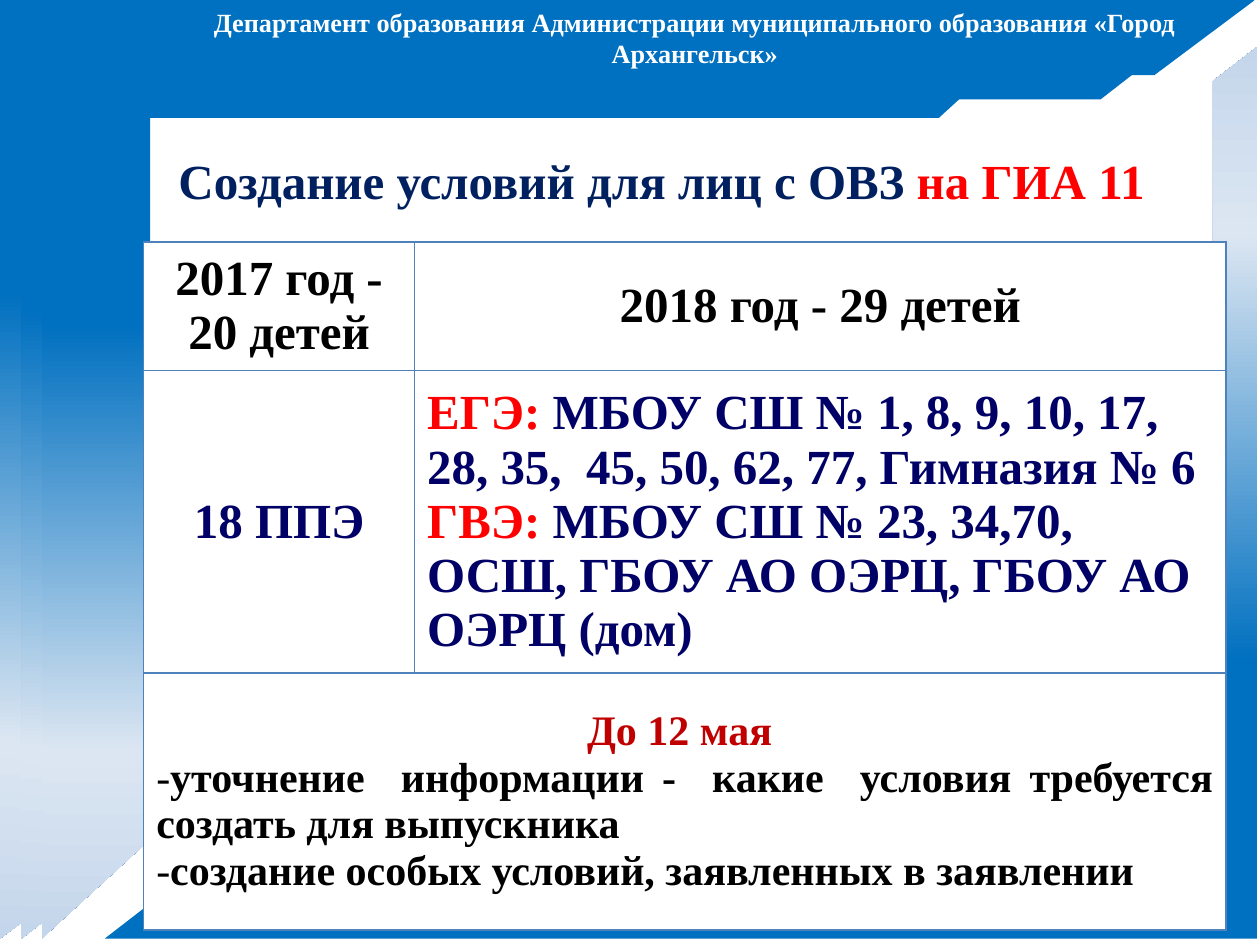
from lxml import etree
from pptx import Presentation
from pptx.dml.color import RGBColor
from pptx.enum.shapes import MSO_SHAPE
from pptx.enum.text import MSO_ANCHOR, PP_ALIGN
from pptx.oxml.ns import qn
from pptx.util import Inches, Pt

HALF_FRAME = MSO_SHAPE.HALF_FRAME
MIDDLE = MSO_ANCHOR.MIDDLE
LEFT, CENTER, JUSTIFY = PP_ALIGN.LEFT, PP_ALIGN.CENTER, PP_ALIGN.JUSTIFY

WHITE = RGBColor(0xFF, 0xFF, 0xFF)
BLACK = RGBColor(0x00, 0x00, 0x00)
NAVY = RGBColor(0x00, 0x20, 0x60)
INDIGO = RGBColor(0x00, 0x00, 0x66)
RED = RGBColor(0xFF, 0x00, 0x00)
DARK_RED = RGBColor(0xC0, 0x00, 0x00)
BORDER = RGBColor(0x4F, 0x81, 0xBD)
FRAME_STOPS = [
    (31, RGBColor(0x00, 0x70, 0xC0)),
    (79, RGBColor(0xDC, 0xE6, 0xF2)),
    (100, RGBColor(0xC4, 0xD6, 0xEB)),
    (100, RGBColor(0xFF, 0xEB, 0xFA)),
]
SERIF = "Times New Roman"

FRAMES = [
    ((0, 0, 9.96, 7.45), (0.08, 0.16), 0),
    ((0.17, 0.21, 9.31, 7.24), (0.08, 0.11), 0),
    ((0.33, 0.37, 7.74, 7.08), (0.08, 0.12), 0),
    ((0.83, 0.37, 9.15, 7.08), (0.05, 0.05), 180),
]
DEPARTMENT = [("Департамент образования Администрации муниципального образования «Город Архангельск»", WHITE)]
TITLE = [("Создание условий для лиц с ОВЗ ", NAVY), ("на ГИА 11", RED)]

COLUMN_WIDTHS = [2.15, 6.44]
ROWS = [
    (1.02, 28, [
        [(CENTER, "", [("2017 год -", BLACK)]), (CENTER, "", [("20 детей", BLACK)])],
        [(CENTER, "", [("2018 год - 29 детей", BLACK)])],
    ]),
    (2.4, 28, [
        [(CENTER, "", [("18 ППЭ", INDIGO)])],
        [
            (LEFT, "", [("ЕГЭ:", RED),
                        (" МБОУ СШ № 1, 8, 9, 10, 17, 28, 35,  45, 50, 62, 77, Гимназия № 6", INDIGO)]),
            (LEFT, "", [("ГВЭ:", RED),
                        (" МБОУ СШ № 23, 34,70, ОСШ, ГБОУ АО ОЭРЦ, ГБОУ АО ОЭРЦ (дом)", INDIGO)]),
        ],
    ]),
    (2.04, 24, [
        [
            (CENTER, "", [("До 12 мая ", DARK_RED)]),
            (JUSTIFY, "-", [("уточнение  информации -  какие  условия требуется создать для выпускника", BLACK)]),
            (JUSTIFY, "-", [("создание особых условий, заявленных в заявлении", BLACK)]),
        ],
    ]),
]


def add_runs(paragraph, runs, size, align):
    paragraph.alignment = align
    for text, color in runs:
        run = paragraph.add_run()
        run.text = text
        run.font.name = SERIF
        run.font.size = Pt(size)
        run.font.bold = True
        run.font.color.rgb = color


def fill_gradient(shape):
    shape.fill.gradient()
    shape.fill.gradient_angle = 270
    stops = shape._element.spPr.find(qn("a:gradFill")).find(qn("a:gsLst"))
    for stop in list(stops):
        stops.remove(stop)
    for percent, color in FRAME_STOPS:
        stop = etree.SubElement(stops, qn("a:gs"), pos=str(percent * 1000))
        etree.SubElement(stop, qn("a:srgbClr"), val=str(color))


def add_frame(slide, box, thickness, rotation):
    frame = slide.shapes.add_shape(HALF_FRAME, *map(Inches, box))
    frame.shadow.inherit = False
    frame.line.fill.background()
    frame.rotation = rotation
    for index, value in enumerate(thickness):
        frame.adjustments[index] = value
    fill_gradient(frame)


def style_cell(cell):
    cell.vertical_anchor = MIDDLE
    properties = cell._tc.get_or_add_tcPr()
    for side in ("a:lnL", "a:lnR", "a:lnT", "a:lnB"):
        line = etree.SubElement(properties, qn(side), w=str(Pt(1)))
        solid = etree.SubElement(line, qn("a:solidFill"))
        etree.SubElement(solid, qn("a:srgbClr"), val=str(BORDER))
    cell.fill.solid()
    cell.fill.fore_color.rgb = WHITE


def write_cell(cell, paragraphs, size):
    frame = cell.text_frame
    for index, (align, bullet, runs) in enumerate(paragraphs):
        paragraph = frame.add_paragraph() if index else frame.paragraphs[0]
        if bullet:
            properties = paragraph._p.get_or_add_pPr()
            etree.SubElement(properties, qn("a:buFont"), typeface=SERIF)
            etree.SubElement(properties, qn("a:buChar"), char=bullet)
        add_runs(paragraph, runs, size, align)


def add_conditions(slide):
    heights = [height for height, _, _ in ROWS]
    table = slide.shapes.add_table(
        len(ROWS), len(COLUMN_WIDTHS), Inches(1.14), Inches(1.92),
        Inches(sum(COLUMN_WIDTHS)), Inches(sum(heights))).table
    for column, width in zip(table.columns, COLUMN_WIDTHS):
        column.width = Inches(width)
    for row_index, (height, size, contents) in enumerate(ROWS):
        row = table.rows[row_index]
        row.height = Inches(height)
        for cell in row.cells:
            style_cell(cell)
        if len(contents) == 1:
            row.cells[0].merge(row.cells[len(COLUMN_WIDTHS) - 1])
        for column_index, paragraphs in enumerate(contents):
            write_cell(row.cells[column_index], paragraphs, size)


def main():
    deck = Presentation()
    deck.slide_width, deck.slide_height = Inches(10), Inches(7.5)
    slide = deck.slides.add_slide(deck.slide_layouts[5])
    title = slide.shapes.title

    for box, thickness, rotation in FRAMES:
        add_frame(slide, box, thickness, rotation)

    department = slide.shapes.add_textbox(*map(Inches, (0.95, 0, 9.13, 0.35))).text_frame
    department.word_wrap = True
    add_runs(department.paragraphs[0], DEPARTMENT, 15, CENTER)

    slide.shapes._spTree.append(title._element)
    title.left, title.top, title.width, title.height = map(Inches, (0.75, 1.15, 9, 0.55))
    title.text_frame.vertical_anchor = MIDDLE
    add_runs(title.text_frame.paragraphs[0], TITLE, 28, CENTER)

    add_conditions(slide)
    deck.save("out.pptx")


if __name__ == "__main__":
    main()
